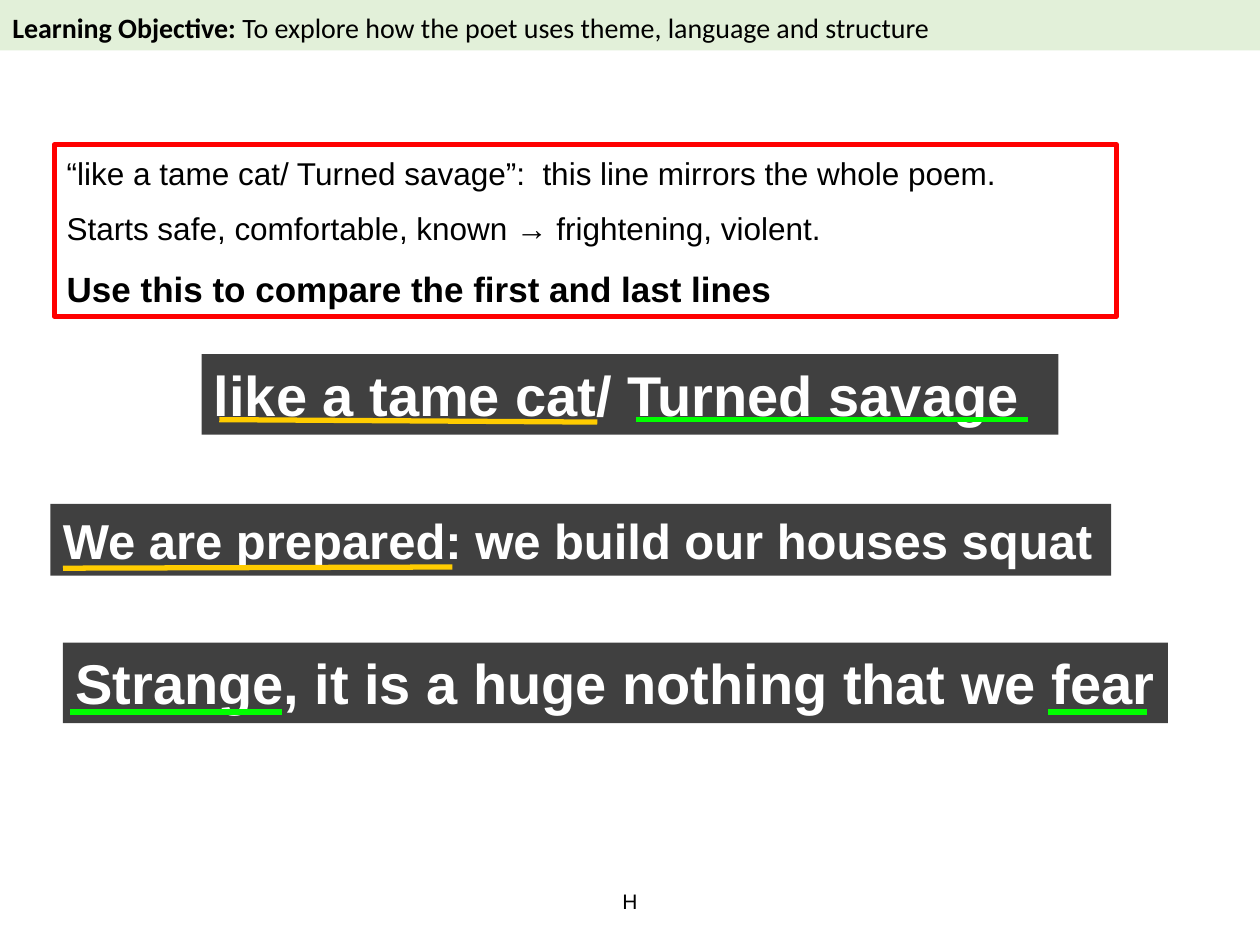
from dataclasses import dataclass
from pptx import Presentation
from pptx.dml.color import RGBColor as Rgb
from pptx.enum.shapes import MSO_CONNECTOR as Link, MSO_SHAPE as Form
from pptx.enum.text import MSO_ANCHOR as Anchor, PP_ALIGN as Align
from pptx.oxml.ns import qn
from pptx.util import Pt
from lxml.etree import SubElement


@dataclass(frozen=True)
class Theme:
    black: str = "000000"
    white: str = "FFFFFF"
    red: str = "FF0000"
    gold: str = "FFCC00"
    lime: str = "00FF00"
    mint: str = "E2F0D9"
    shade: int = 75
    rule: int = 3
    tiny: int = 12
    goal: int = 16
    note: int = 18
    lead: int = 20
    quote: int = 28
    large: int = 32
    sans: str = "Arial"
    head: str = "Calibri"


T = Theme()


def style(para, size, color=T.black, face=T.sans, bold=None):
    font = para.font
    font.size, font.name, font.bold = Pt(size), face, bold
    font.color.rgb = Rgb.from_string(color)


def panel(slide, box, fill, top=3.6, right=7.2):
    shape = slide.shapes.add_shape(Form.RECTANGLE, *map(Pt, box))
    shape.shadow.inherit = False
    shape.fill.solid()
    shape.fill.fore_color.rgb = Rgb.from_string(fill)
    shape.line.fill.background()
    frame = shape.text_frame
    frame.word_wrap = True
    frame.vertical_anchor = Anchor.TOP
    frame.margin_top, frame.margin_right = Pt(top), Pt(right)
    frame.paragraphs[0].alignment = Align.LEFT
    return shape


def stroke(slide, start, end, color):
    line = slide.shapes.add_connector(Link.STRAIGHT, *map(Pt, start + end))
    line.line.width = Pt(T.rule)
    line.line.color.rgb = Rgb.from_string(color)
    SubElement(line._element.spPr, qn("a:effectLst"))


def header(slide, box):
    para = panel(slide, box, T.mint, top=6).text_frame.paragraphs[0]
    style(para, T.goal, face=T.head)
    label = para.add_run()
    label.text = "Learning Objective: "
    label.font.bold = True
    para.add_run().text = "To explore how the poet uses theme, language and structure"


def notes(slide, box):
    shape = panel(slide, box, T.white, top=5)
    shape.line.color.rgb = Rgb.from_string(T.red)
    shape.line.width = Pt(T.rule)
    rows = [
        ("“like a tame cat/ Turned savage”:  this line mirrors the whole poem.", T.note, 0, None),
        ("Starts safe, comfortable, known → frightening, violent.", T.note, 10.3, None),
        ("Use this to compare the first and last lines", T.lead, 11.5, True),
    ]
    frame = shape.text_frame
    for i, (text, size, gap, bold) in enumerate(rows):
        para = frame.add_paragraph() if i else frame.paragraphs[0]
        para.text = text
        para.alignment = Align.LEFT
        para.space_before = Pt(gap)
        style(para, size, bold=bold)


def quote(slide, box, text, size, marks):
    shape = panel(slide, box, T.black, right=0)
    tint = shape._element.spPr.find(qn("a:solidFill"))[0]
    SubElement(tint, qn("a:alpha")).set("val", str(T.shade * 1000))
    para = shape.text_frame.paragraphs[0]
    para.text = text
    style(para, size, T.white, bold=True)
    left, top = box[:2]
    for x1, y1, x2, y2, color in marks:
        stroke(slide, (left + x1, top + y1), (left + x2, top + y2), color)


def footer(slide, box):
    frame = slide.shapes.add_textbox(*map(Pt, box)).text_frame
    frame.word_wrap = True
    frame.vertical_anchor = Anchor.MIDDLE
    para = frame.paragraphs[0]
    para.text = "H"
    para.alignment = Align.CENTER
    style(para, T.tiny)


def main():
    deck = Presentation()
    deck.slide_width, deck.slide_height = Pt(720), Pt(540)
    slide = deck.slides.add_slide(deck.slide_layouts[6])
    footer(slide, (238.3, 500.4, 243.4, 28.8))
    notes(slide, (31, 82.8, 607, 97.9))
    quote(slide, (36, 367.2, 631.4, 46), "Strange, it is a huge nothing that we fear", T.large,
          [(4.3, 39.6, 125.3, 39.6, T.lime), (563, 39.6, 619.2, 39.6, T.lime)])
    quote(slide, (28.8, 288, 606.2, 41), "We are prepared: we build our houses squat", T.quote,
          [(7.2, 36.7, 229.7, 36, T.gold)])
    quote(slide, (115.2, 202.3, 489.6, 46), "like a tame cat/ Turned savage", T.large,
          [(10.1, 37.5, 226.1, 38.9, T.gold), (248.4, 37.5, 472.3, 37.5, T.lime)])
    header(slide, (0, 0, 720, 28.8))
    deck.save("out.pptx")


if __name__ == "__main__":
    main()
